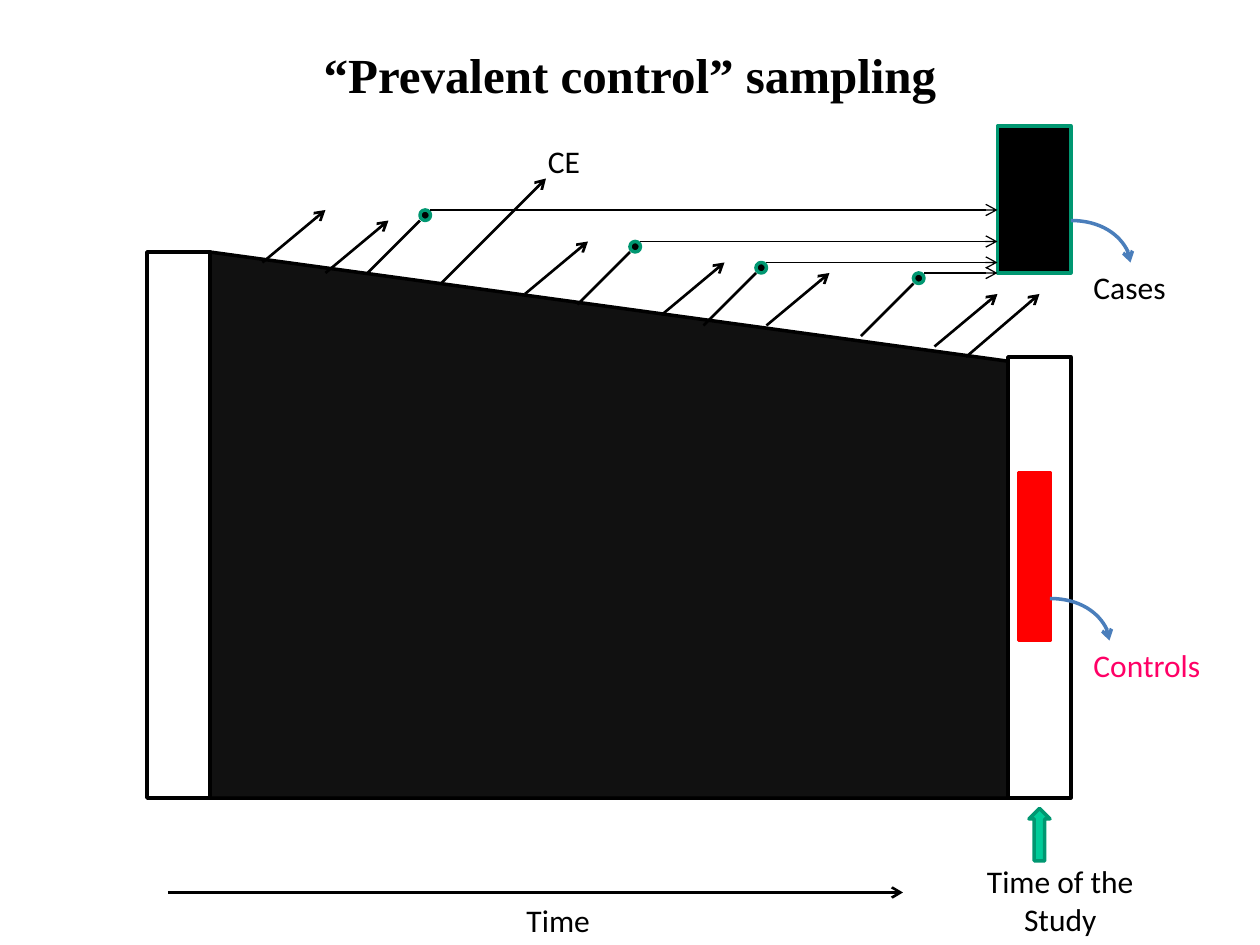
from dataclasses import dataclass

from lxml.etree import SubElement
from pptx import Presentation
from pptx.dml.color import RGBColor
from pptx.enum.shapes import MSO_CONNECTOR as LINK, MSO_SHAPE as SHAPE
from pptx.enum.text import MSO_ANCHOR, MSO_AUTO_SIZE, PP_ALIGN
from pptx.oxml.ns import qn
from pptx.util import Inches, Pt


@dataclass(frozen=True)
class Theme:
    black: str = "000000"
    cohort: str = "111111"
    green: str = "009771"
    mint: str = "00CC99"
    red: str = "FF0000"
    pink: str = "FF0066"
    blue: str = "4A7EBB"
    title_font: str = "Times New Roman"
    font: str = "Calibri"
    title_size: int = 28
    size: int = 18
    outline: float = 2
    arrow: float = 1.5
    thin: float = 0.75


T = Theme()

# Leaving the cohort: start x, start y, run, rise, in grid steps from its corner
EXITS = [(11, 1, 6, 5), (17, 2, 6, 5), (36, 4, 6, 5), (49, 6, 6, 5),
         (59, 7, 6, 5), (75, 9, 6, 5), (78, 10, 7, 6), (28, 3, 10, 10)]
CASES = [(21, 2), (41, 5), (53, 7), (68, 8)]


def grid(n):
    """Length of n steps of a twelfth of an inch."""
    return Inches(n / 12)


def add_box(slide, kind, box, fill, line):
    sp = slide.shapes.add_shape(kind, *map(grid, box))
    sp.shadow.inherit = False
    if fill:
        sp.fill.solid()
        sp.fill.fore_color.rgb = RGBColor.from_string(fill)
    else:
        sp.fill.background()
    sp.line.color.rgb = RGBColor.from_string(line)
    sp.line.width = Pt(T.outline)
    return sp


def add_line(slide, start, end, width=T.arrow, color=T.black, head=True, kind=LINK.STRAIGHT):
    c = slide.shapes.add_connector(kind, *map(grid, (*start, *end)))
    c.line.color.rgb = RGBColor.from_string(color)
    c.line.width = Pt(width)
    if head:
        SubElement(c.line._get_or_add_ln(), qn("a:tailEnd"), type="arrow")
    SubElement(c._element.spPr, qn("a:effectLst"))
    return c


def add_curve(slide, x, y):
    """Quarter-turn arrow that leaves to the right and ends pointing down."""
    c = add_line(slide, (x, y), (x + 5.67, y + 4), T.outline, T.blue, kind=LINK.CURVE)
    c._element.spPr.find(qn("a:prstGeom")).set("prst", "curvedConnector2")


def add_label(slide, text, left, top, width, height=0.4, color=T.black, wrap=False, align=None):
    tf = slide.shapes.add_textbox(*map(Inches, (left, top, width, height))).text_frame
    tf.word_wrap = wrap
    tf.auto_size = MSO_AUTO_SIZE.SHAPE_TO_FIT_TEXT
    p = tf.paragraphs[0]
    p.text = text
    p.alignment = align
    p.font.name, p.font.size = T.font, Pt(T.size)
    p.font.color.rgb = RGBColor.from_string(color)


def set_title(slide, text):
    sp = slide.shapes.title
    sp.left, sp.top, sp.width, sp.height = map(Inches, (0, 0.3, 10, 0.57))
    tf = sp.text_frame
    tf.text = text
    tf.vertical_anchor = MSO_ANCHOR.MIDDLE
    p = tf.paragraphs[0]
    p.alignment = PP_ALIGN.CENTER
    p.font.name, p.font.size, p.font.bold = T.title_font, Pt(T.title_size), True
    p.font.color.rgb = RGBColor.from_string(T.black)


def draw_cohort(slide, x, y, w, h):
    """Shrinking population between its start and end bars."""
    bar, drop = 6, 10
    body = add_box(slide, SHAPE.FLOWCHART_MANUAL_INPUT,
                   (x + bar, y, w - 2 * bar, h), T.cohort, T.black)
    body._element.spPr.find(qn("a:xfrm")).set("flipH", "1")
    add_box(slide, SHAPE.RECTANGLE, (x + w - bar, y + drop, bar, h - drop), None, T.black)
    add_box(slide, SHAPE.RECTANGLE, (x, y, bar, h), None, T.black)
    for dx, dy, run, rise in EXITS:
        start = x + dx, y + dy
        add_line(slide, start, (start[0] + run, start[1] - rise))
    add_label(slide, "CE", 4.25, 1.08, 0.46)


def draw_cases(slide, x, y, box):
    """Case lines rising from the cohort corner (x, y) and feeding the case box."""
    left, top, width, _ = box
    add_box(slide, SHAPE.RECTANGLE, box, T.black, T.green)
    for dx, dy in CASES:
        start = x + dx, y + dy
        tip = start[0] + 5, start[1] - 5
        add_line(slide, start, tip, head=False)
        add_box(slide, SHAPE.OVAL, (tip[0], tip[1] - 1, 1, 1), T.black, T.green)
        add_line(slide, (tip[0] + 1, tip[1] - 1), (left, tip[1] - 1), T.thin)
    add_curve(slide, left + width, top + 9)
    add_label(slide, "Cases", 8.58, 2.08, 0.78)


def draw_controls(slide, box):
    left, top, width, _ = box
    add_box(slide, SHAPE.RECTANGLE, box, T.red, T.red)
    add_curve(slide, left + width, top + 12)
    add_label(slide, "Controls", 8.58, 5.08, 1.06, color=T.pink, wrap=True)


def draw_timeline(slide, x, y, w):
    add_line(slide, (x, y), (x + w, y))
    add_label(slide, "Time", 4.08, 7.1, 0.71)
    add_box(slide, SHAPE.UP_ARROW, (x + w + 12, y - 8, 2, 5), T.mint, T.green)
    add_label(slide, "Time of the Study", 7.58, 6.79, 1.67, 0.7, wrap=True,
              align=PP_ALIGN.CENTER)


def main():
    prs = Presentation()
    prs.slide_width, prs.slide_height = Inches(10), Inches(7.5)
    slide = prs.slides.add_slide(prs.slide_layouts[5])
    set_title(slide, "“Prevalent control” sampling")
    draw_cohort(slide, 14, 24, 88, 52)
    draw_cases(slide, 14, 24, (95, 12, 7, 14))
    draw_controls(slide, (97, 45, 3, 16))
    draw_timeline(slide, 16, 85, 70)
    prs.save("out.pptx")


if __name__ == "__main__":
    main()
